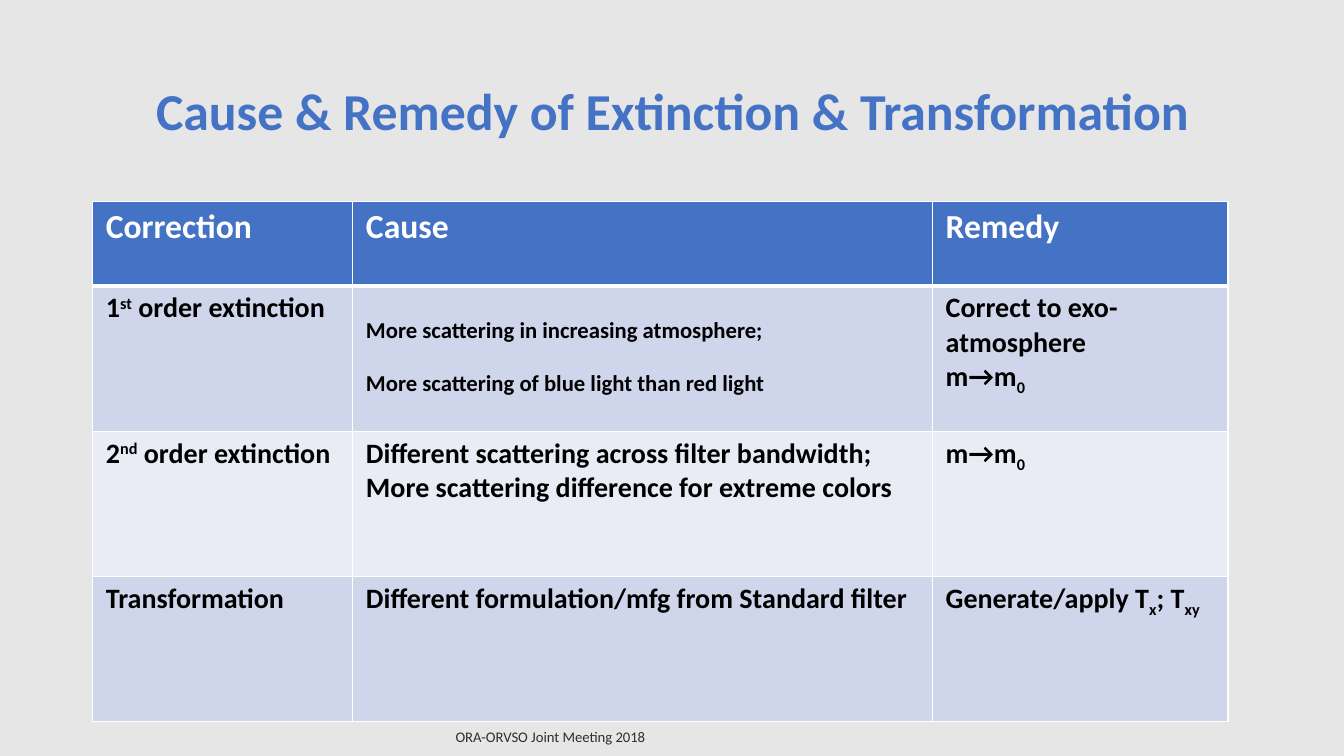
"""Builds a slide with a table of causes and remedies of photometric corrections."""
from lxml import etree
from pptx import Presentation
from pptx.dml.color import RGBColor
from pptx.enum import text as t
from pptx.oxml import ns
from pptx.util import Inches, Pt

BLUE = RGBColor(0x44, 0x72, 0xC4)
WHITE = RGBColor(0xFF, 0xFF, 0xFF)
BLACK = RGBColor(0, 0, 0)
GREY = RGBColor(0xE7, 0xE6, 0xE6)
BANDS = RGBColor(0xCF, 0xD5, 0xEA), RGBColor(0xE9, 0xEB, 0xF5)

SUPER, SUB = 30, -25
TITLE = {"size": Pt(37), "bold": True, "name": "Calibri"}
HEADER = {"size": Pt(24), "bold": True, "name": "Calibri"}
BODY = {**HEADER, "size": Pt(20)}
LOWERED = {**HEADER, "size": Pt(28)}
FOOTER = {"size": Pt(10.5), "name": "Calibri"}

COLUMNS = 2.58, 5.75, 2.93
ROWS = 0.84, 1.44, 1.44, 1.44
HEADINGS = "Correction", "Cause", "Remedy"
TO_EXOATMOSPHERE = [("m→m", 0), ("0", SUB)]
CORRECTIONS = [
    [
        [[("1", 0), ("st", SUPER), (" order extinction", 0)]],
        [[("More scattering in increasing atmosphere;", SUB)],
         [("More scattering of blue light than red light", SUB)]],
        [[("Correct to exo-atmosphere", 0)], TO_EXOATMOSPHERE],
    ],
    [
        [[("2", 0), ("nd", SUPER), (" order extinction", 0)]],
        [[("Different scattering across filter bandwidth;", 0)],
         [("More scattering difference for extreme colors", 0)]],
        [TO_EXOATMOSPHERE],
    ],
    [
        [[("Transformation", 0)]],
        [[("Different formulation/mfg from Standard filter", 0)]],
        [[("Generate/apply T", 0), ("x", SUB), ("; T", 0), ("xy", SUB)]],
    ],
]


def set_attributes(target, values):
    """Set each attribute in values on target."""
    for name, value in values.items():
        setattr(target, name, value)


def place(shape, left, top, width, height):
    """Move and size a shape, in inches."""
    set_attributes(shape, {"left": Inches(left), "top": Inches(top),
                           "width": Inches(width), "height": Inches(height)})


def write_run(paragraph, words, style, color, baseline=0):
    """Add one formatted run, raised or lowered by a percentage."""
    run = paragraph.add_run()
    run.text = words
    set_attributes(run.font, style)
    run.font.color.rgb = color
    if baseline:
        run.font._element.set("baseline", str(baseline * 1000))
    return run


def add_borders(cell, bottom):
    """Draw white cell borders, with the bottom one of the given weight."""
    properties = cell._tc.get_or_add_tcPr()
    for side, weight in (("L", 1), ("R", 1), ("T", 1), ("B", bottom)):
        line = etree.SubElement(properties, ns.qn(f"a:ln{side}"), w=str(Pt(weight)))
        fill = etree.SubElement(line, ns.qn("a:solidFill"))
        etree.SubElement(fill, ns.qn("a:srgbClr"), val=str(WHITE))


def fill_cell(cell, paragraphs, style, color, background, bottom=1):
    """Fill one table cell with paragraphs of (words, baseline) runs."""
    set_attributes(cell, {"margin_left": Inches(0.13), "margin_right": Inches(0.13),
                          "margin_top": Inches(0.05), "margin_bottom": Inches(0.05)})
    add_borders(cell, bottom)
    cell.fill.solid()
    cell.fill.fore_color.rgb = background
    for index, runs in enumerate(paragraphs):
        frame = cell.text_frame
        paragraph = frame.add_paragraph() if index else frame.paragraphs[0]
        for words, baseline in runs:
            write_run(paragraph, words, style, color, baseline)


def add_title(slide, words):
    """Write the centred slide title."""
    title = slide.shapes.title
    place(title, 0.92, 0.4, 11.5, 1.45)
    set_attributes(title.text_frame, {"word_wrap": True, "auto_size": t.MSO_AUTO_SIZE.NONE,
                                      "vertical_anchor": t.MSO_ANCHOR.MIDDLE})
    heading = title.text_frame.paragraphs[0]
    set_attributes(heading, {"alignment": t.PP_ALIGN.CENTER, "line_spacing": 0.9})
    write_run(heading, words, TITLE, BLUE)


def add_corrections(slide):
    """Add the table of corrections."""
    table = slide.shapes.add_table(len(ROWS), len(COLUMNS), Inches(0.92), Inches(2),
                                   Inches(sum(COLUMNS)), Inches(sum(ROWS))).table
    for column, width in zip(table.columns, COLUMNS):
        column.width = Inches(width)
    for row, height in zip(table.rows, ROWS):
        row.height = Inches(height)
    for column, heading in enumerate(HEADINGS):
        fill_cell(table.cell(0, column), [[(heading, 0)]], HEADER, WHITE, BLUE, bottom=3)
    for row, correction in enumerate(CORRECTIONS):
        for column, paragraphs in enumerate(correction):
            style = LOWERED if paragraphs[0][0][1] == SUB else BODY
            fill_cell(table.cell(row + 1, column), paragraphs, style, BLACK, BANDS[row % 2])


def add_footer(slide, words):
    """Add the meeting name in slightly transparent black."""
    footer = slide.shapes.add_textbox(Inches(4.42), Inches(7.11), Inches(4.5), Inches(0.4))
    set_attributes(footer.text_frame, {"word_wrap": True,
                                       "vertical_anchor": t.MSO_ANCHOR.MIDDLE})
    meeting = footer.text_frame.paragraphs[0]
    meeting.space_after = Pt(6)
    run = write_run(meeting, words, FOOTER, BLACK)
    color = run.font._element.find(".//" + ns.qn("a:srgbClr"))
    etree.SubElement(color, ns.qn("a:alpha"), val="80000")


def main():
    """Build and save the slide."""
    deck = Presentation()
    set_attributes(deck, {"slide_width": Inches(13.33), "slide_height": Inches(7.5)})
    slide = deck.slides.add_slide(deck.slide_layouts.get_by_name("Title Only"))
    slide.background.fill.solid()
    slide.background.fill.fore_color.rgb = GREY
    add_title(slide, "Cause & Remedy of Extinction & Transformation")
    add_corrections(slide)
    add_footer(slide, "ORA-ORVSO Joint Meeting 2018")
    deck.save("out.pptx")


if __name__ == "__main__":
    main()
